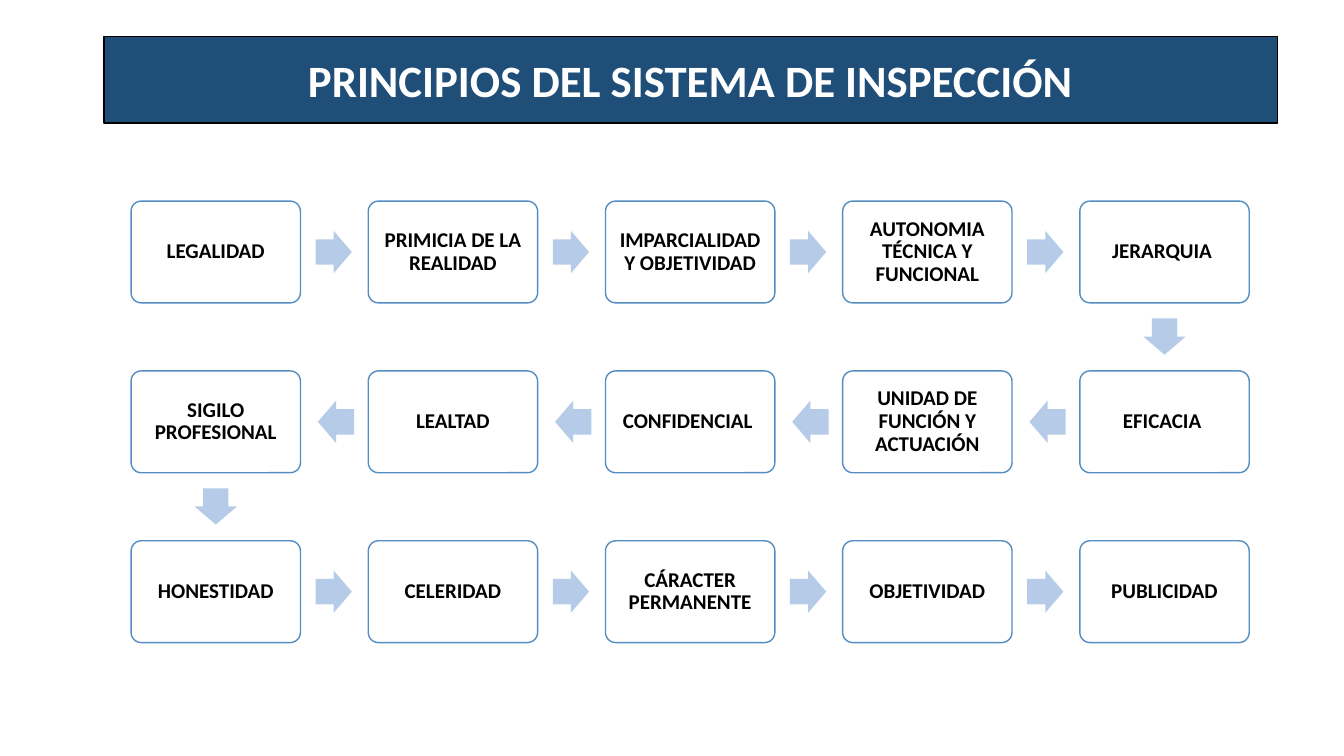
"""Build the slide on the principles of the inspection system."""
from dataclasses import dataclass
from typing import Any

from pptx import Presentation
from pptx import util as u
from pptx.dml.color import RGBColor
from pptx.enum import shapes, text


@dataclass(frozen=True)
class Theme:
    font: str = "Calibri"
    title_size: int = 32
    step_size: int = 15
    banner: str = "1F4E79"
    banner_text: str = "FFFFFF"
    banner_edge: str = "000000"
    step: str = "FFFFFF"
    step_text: str = "000000"
    step_edge: str = "538DC1"
    arrow: str = "B5CBE7"


@dataclass(frozen=True)
class Turn:
    dx: float
    dy: float
    rotation: int


@dataclass(frozen=True)
class Principle:
    label: str
    row: int
    column: int
    turn: Turn | None


THEME = Theme()
RIGHT = Turn(1.17, 0, 0)
LEFT = Turn(-1.16, 0, 180)
DOWN = Turn(0, 0.84, 90)

ROWS = (
    ("LEGALIDAD", "PRIMICIA DE LA REALIDAD", "IMPARCIALIDAD Y OBJETIVIDAD",
     "AUTONOMIA TÉCNICA Y FUNCIONAL", "JERARQUIA "),
    ("EFICACIA ", "UNIDAD DE FUNCIÓN Y ACTUACIÓN", "CONFIDENCIAL ",
     "LEALTAD", "SIGILO PROFESIONAL"),
    ("HONESTIDAD", "CELERIDAD", "CÁRACTER PERMANENTE",
     "OBJETIVIDAD", "PUBLICIDAD"),
)
FIRST_X, LAST_X = 2.14, 11.55
FIRST_Y, LAST_Y = 2.5, 5.87
STEP_WIDTH, STEP_HEIGHT = 1.68, 1.01
ARROW_LENGTH, ARROW_WIDTH = 0.36, 0.42


def apply(target: Any, values: dict[str, Any]) -> None:
    for name, value in values.items():
        setattr(target, name, value)


def box(x: float, y: float, width: float, height: float) -> dict[str, u.Length]:
    return {"left": u.Inches(x), "top": u.Inches(y),
            "width": u.Inches(width), "height": u.Inches(height)}


def centred(x: float, y: float, width: float, height: float) -> dict[str, u.Length]:
    return box(x - width / 2, y - height / 2, width, height)


def paint(shape: Any, fill: str, edge: str | None = None) -> None:
    shape.fill.solid()
    shape.fill.fore_color.rgb = RGBColor.from_string(fill)
    if edge is None:
        shape.line.fill.background()
    else:
        shape.line.color.rgb = RGBColor.from_string(edge)
        shape.line.width = u.Pt(1)


def write(shape: Any, label: str, size: int, colour: str,
          frame_format: dict[str, Any], spacing: float = 1.0) -> None:
    frame = shape.text_frame
    frame.text = label
    apply(frame, {"word_wrap": True, "auto_size": text.MSO_AUTO_SIZE.NONE,
                  "vertical_anchor": text.MSO_ANCHOR.MIDDLE, **frame_format})
    paragraph = frame.paragraphs[0]
    apply(paragraph, {"alignment": text.PP_ALIGN.CENTER, "line_spacing": spacing})
    font = paragraph.runs[0].font
    apply(font, {"name": THEME.font, "size": u.Pt(size), "bold": True})
    font.color.rgb = RGBColor.from_string(colour)


def principles() -> list[Principle]:
    steps = []
    for row, labels in enumerate(ROWS):
        forward = row % 2 == 0
        last = len(labels) - 1
        for order, label in enumerate(labels):
            turn = RIGHT if forward else LEFT
            if order == last:
                turn = DOWN if row < len(ROWS) - 1 else None
            steps.append(Principle(label, row, order if forward else last - order, turn))
    return steps


def draw_principle(slide: Any, principle: Principle) -> None:
    x = FIRST_X + principle.column * (LAST_X - FIRST_X) / (len(ROWS[0]) - 1)
    y = FIRST_Y + principle.row * (LAST_Y - FIRST_Y) / (len(ROWS) - 1)
    step = slide.shapes.add_shape(shapes.MSO_SHAPE.ROUNDED_RECTANGLE,
                                  **centred(x, y, STEP_WIDTH, STEP_HEIGHT))
    step.adjustments[0] = 0.1
    step.shadow.inherit = False
    paint(step, THEME.step, THEME.step_edge)
    margins = {f"margin_{side}": u.Inches(0.06)
               for side in ("left", "top", "right", "bottom")}
    write(step, principle.label, THEME.step_size, THEME.step_text, margins, 0.9)
    if principle.turn:
        draw_arrow(slide, x, y, principle.turn)


def draw_arrow(slide: Any, x: float, y: float, turn: Turn) -> None:
    arrow = slide.shapes.add_shape(
        shapes.MSO_SHAPE.RIGHT_ARROW,
        **centred(x + turn.dx, y + turn.dy, ARROW_LENGTH, ARROW_WIDTH))
    arrow.adjustments[0] = 0.6
    arrow.adjustments[1] = 0.5
    arrow.rotation = turn.rotation
    arrow.shadow.inherit = False
    paint(arrow, THEME.arrow)


def main() -> None:
    deck = Presentation()
    apply(deck, {"slide_width": u.Inches(13.33), "slide_height": u.Inches(7.5)})
    slide = deck.slides.add_slide(deck.slide_layouts.get_by_name("Title Only"))
    banner = slide.shapes.title
    apply(banner, box(1.03, 0.36, 11.64, 0.86))
    paint(banner, THEME.banner, THEME.banner_edge)
    write(banner, "PRINCIPIOS DEL SISTEMA DE INSPECCIÓN",
          THEME.title_size, THEME.banner_text, {})
    for principle in principles():
        draw_principle(slide, principle)
    deck.save("out.pptx")


if __name__ == "__main__":
    main()
